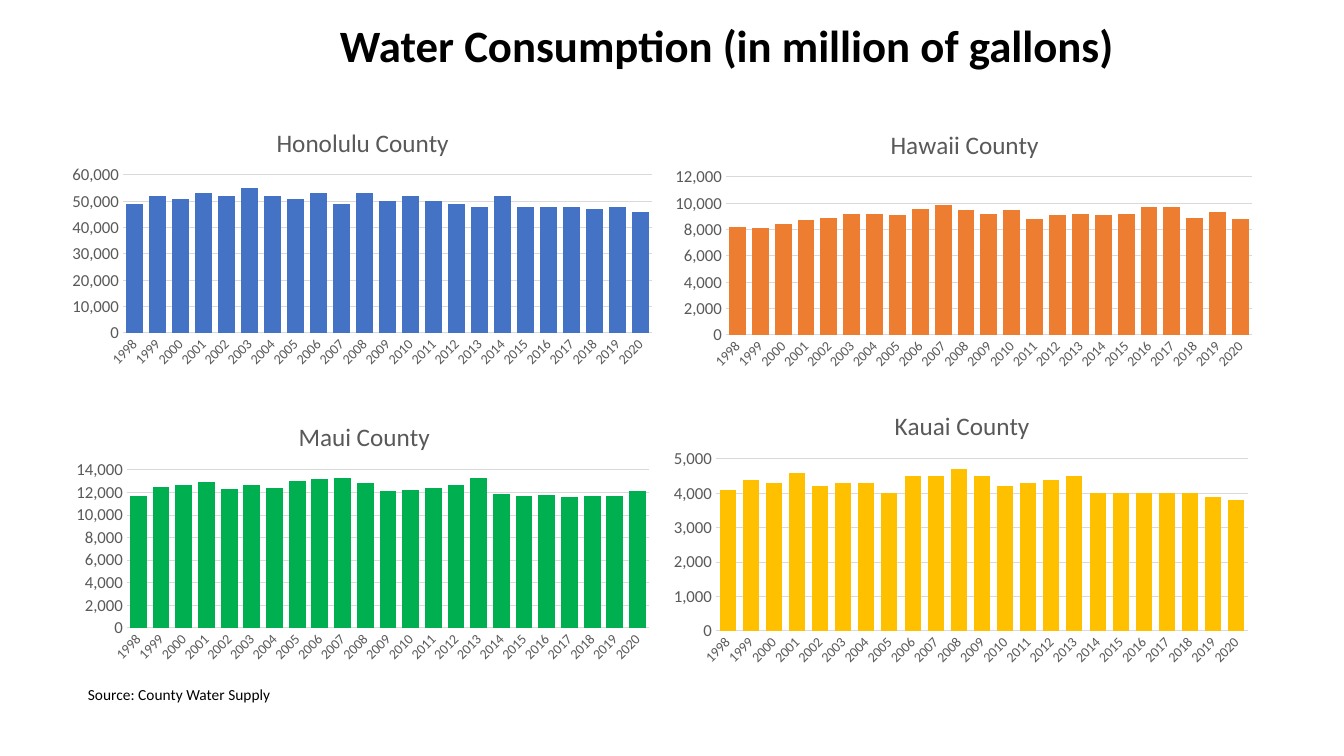
from pptx import Presentation
from pptx.chart.data import CategoryChartData
from pptx.dml.color import RGBColor
from pptx.enum.chart import XL_CHART_TYPE as ChartType, XL_TICK_MARK as Tick
from pptx.oxml import parse_xml
from pptx.oxml.ns import nsdecls, qn
from pptx.util import Emu, Pt

FONT = "Calibri"
BLACK = RGBColor(0x00, 0x00, 0x00)
GRAY = RGBColor(0x59, 0x59, 0x59)
LIGHT = RGBColor(0xD9, 0xD9, 0xD9)
BLUE = RGBColor(0x44, 0x72, 0xC4)
ORANGE = RGBColor(0xED, 0x7D, 0x31)
GREEN = RGBColor(0x00, 0xB0, 0x50)
GOLD = RGBColor(0xFF, 0xC0, 0x00)

# Content: text, box (left, top, width, height in px), size, bold
TEXTS = [
    ("Water Consumption (in million of gallons)", (330, 13, 1014, 65), 32, True),
    ("Source: County Water Supply", (78, 680, 373, 29), 11, False),
]
YEARS = [str(year) for year in range(1998, 2021)]

# "box" is the chart, "plot" the bar area, "title_at" the title's corner
COUNTIES = [
    dict(name="Honolulu County", color=BLUE, gap=39, top=60000, step=10000,
         box=(60, 100, 603, 273), plot=(123, 175, 529, 158), title_at=(272, 121),
         values=[49000, 52000, 51000, 53000, 52000, 55000, 52000, 51000,
                 53000, 49000, 53000, 50000, 52000, 50000, 49000, 48000,
                 52000, 48000, 48000, 48000, 47000, 48000, 46000]),
    dict(name="Hawaii County", color=ORANGE, gap=36, top=12000, step=2000,
         box=(663, 102, 601, 273), plot=(726, 177, 526, 158), title_at=(886, 123),
         values=[8200, 8100, 8400, 8700, 8900, 9200, 9200, 9100,
                 9600, 9900, 9500, 9200, 9500, 8800, 9100, 9200,
                 9100, 9200, 9700, 9700, 8900, 9300, 8800]),
    dict(name="Maui County", color=GREEN, gap=35, top=14000, step=2000,
         box=(65, 395, 596, 273), plot=(127, 470, 522, 158), title_at=(294, 415),
         values=[11700, 12500, 12700, 12900, 12300, 12700, 12400, 13000,
                 13200, 13300, 12800, 12100, 12200, 12400, 12700, 13300,
                 11900, 11700, 11800, 11600, 11700, 11700, 12100]),
    dict(name="Kauai County", color=GOLD, gap=44, top=5000, step=1000,
         box=(661, 384, 599, 287), plot=(716, 459, 532, 172), title_at=(890, 404),
         values=[4100, 4400, 4300, 4600, 4200, 4300, 4300, 4000,
                 4500, 4500, 4700, 4500, 4200, 4300, 4400, 4500,
                 4000, 4000, 4000, 4000, 4000, 3900, 3800]),
]


def px(n):
    return Emu(round(n * 914400 / 100.8))


def style(font, size, color, bold=False):
    font.name, font.size, font.bold = FONT, Pt(size), bold
    font.color.rgb = color


def thin_line(line):
    line.color.rgb = LIGHT
    line.width = Pt(0.75)


def layout(box, at, size=None):
    """Manual chart layout, as fractions of the chart's box."""
    left, top, width, height = box
    parts = [("xMode", "edge"), ("yMode", "edge")]
    if size:
        parts.insert(0, ("layoutTarget", "inner"))
    parts += [("x", (at[0] - left) / width), ("y", (at[1] - top) / height)]
    if size:
        parts += [("w", size[0] / width), ("h", size[1] / height)]
    body = "".join(f'<c:{tag} val="{val}"/>' for tag, val in parts)
    return parse_xml(f'<c:layout {nsdecls("c")}><c:manualLayout>{body}'
                     '</c:manualLayout></c:layout>')


def drop_layout(element):
    old = element.find(qn("c:layout"))
    if old is not None:
        element.remove(old)


def add_county(s, county):
    data = CategoryChartData(number_format="#,##0")
    data.categories = YEARS
    data.add_series(county["name"], county["values"])
    box = county["box"]
    chart = s.shapes.add_chart(ChartType.COLUMN_CLUSTERED,
                               *map(px, box), data).chart
    style(chart.font, 10, BLACK)
    chart.has_legend = False

    # Title
    chart.has_title = True
    r = chart.chart_title.text_frame.paragraphs[0].add_run()
    r.text = county["name"]
    style(r.font, 18, GRAY)

    # Bars
    bars = chart.plots[0]
    bars.gap_width, bars.overlap = county["gap"], -27
    bars.vary_by_categories = False
    fill = bars.series[0].format.fill
    fill.solid()
    fill.fore_color.rgb = county["color"]

    # Axes
    years, gallons = chart.category_axis, chart.value_axis
    for axis, size in ((years, 10), (gallons, 12)):
        axis.major_tick_mark = axis.minor_tick_mark = Tick.NONE
        style(axis.tick_labels.font, size, GRAY)
    thin_line(years.format.line)
    years._element.find(qn("c:txPr")).find(qn("a:bodyPr")).set("rot", "-2700000")
    gallons.minimum_scale, gallons.maximum_scale = 0, county["top"]
    gallons.major_unit = county["step"]
    gallons.format.line.fill.background()
    thin_line(gallons.major_gridlines.format.line)
    gallons.tick_labels.number_format = "#,##0"
    gallons.tick_labels.number_format_is_linked = False

    # Placement inside the chart
    title = chart.chart_title._element
    drop_layout(title)
    title.find(qn("c:overlay")).addprevious(layout(box, county["title_at"]))
    area = chart._chartSpace.find(qn("c:chart")).find(qn("c:plotArea"))
    drop_layout(area)
    area.insert(0, layout(box, county["plot"][:2], county["plot"][2:]))


def add_text(s, text, box, size, bold):
    tf = s.shapes.add_textbox(*map(px, box)).text_frame
    tf.word_wrap = True
    r = tf.paragraphs[0].add_run()
    r.text = text
    style(r.font, size, BLACK, bold)


def main():
    prs = Presentation()
    prs.slide_width, prs.slide_height = px(1344), px(756)
    s = prs.slides.add_slide(prs.slide_layouts[6])
    for county in COUNTIES:
        add_county(s, county)
    for item in TEXTS:
        add_text(s, *item)
    prs.save("out.pptx")


if __name__ == "__main__":
    main()
